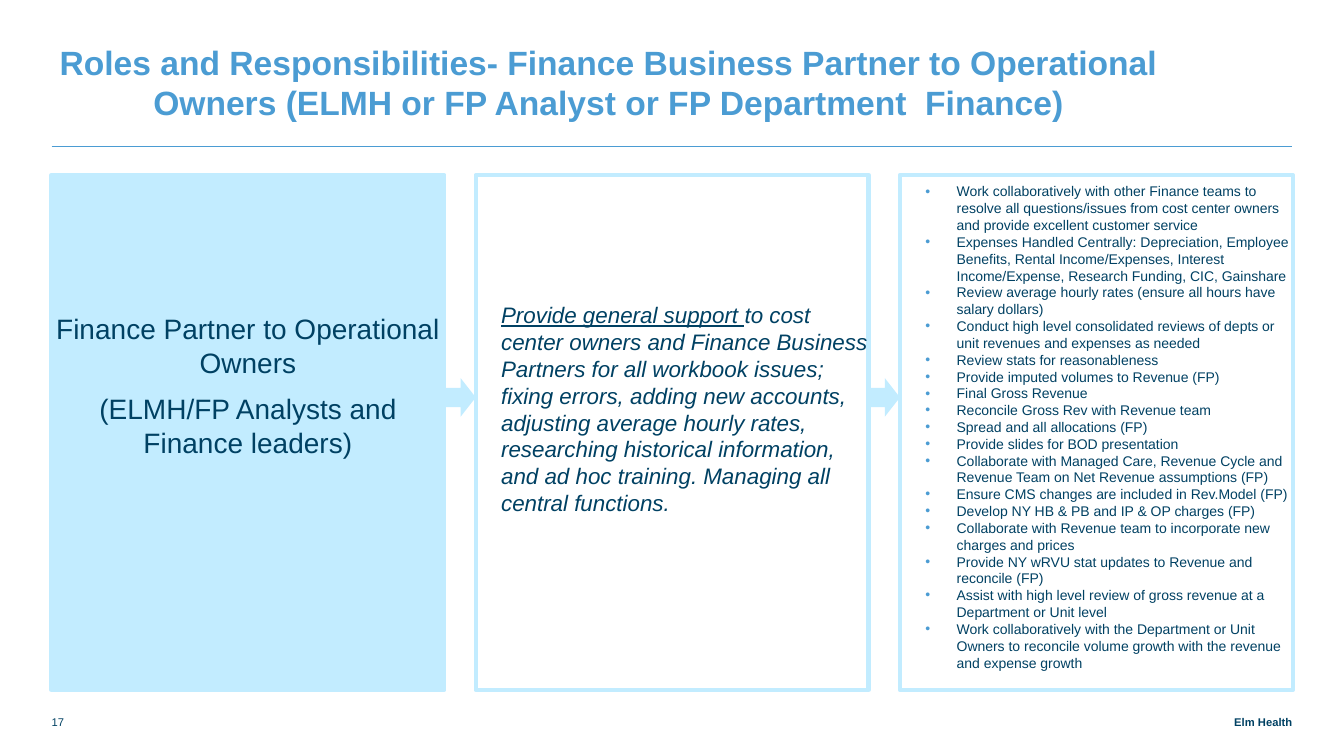
from lxml import etree
from pptx import Presentation
from pptx.dml.color import RGBColor
from pptx.enum.shapes import MSO_CONNECTOR, MSO_SHAPE
from pptx.enum.text import MSO_ANCHOR, PP_ALIGN
from pptx.oxml.ns import qn
from pptx.util import Cm, Pt

RECTANGLE, ARROW = MSO_SHAPE.RECTANGLE, MSO_SHAPE.RIGHT_ARROW
STRAIGHT = MSO_CONNECTOR.STRAIGHT
TOP, BOTTOM = MSO_ANCHOR.TOP, MSO_ANCHOR.BOTTOM
LEFT, CENTER, RIGHT = PP_ALIGN.LEFT, PP_ALIGN.CENTER, PP_ALIGN.RIGHT

NAVY, BLUE, PALE = "004163", "4B9CD3", "C2ECFF"
MARGIN, RIGHT_EDGE = 1.3, 32.57
PANEL_TOP, PANEL_WIDTH, PANEL_HEIGHT = 4.41, 9.9, 12.98
PANEL_STEP = 10.69
ARROW_WIDTH, ARROW_HEIGHT = 0.76, 0.97

TITLE = ("Roles and Responsibilities- Finance Business Partner to Operational "
         "Owners (ELMH or FP Analyst or FP Department  Finance)")
PARTNERS = ["Finance Partner to Operational Owners",
            "(ELMH/FP Analysts and Finance leaders)"]
SUPPORT_LEAD = "Provide general support "
SUPPORT = ("to cost center owners and Finance Business Partners for all workbook "
           "issues; fixing errors, adding new accounts, adjusting average hourly "
           "rates, researching historical information, and ad hoc training. "
           "Managing all central functions.")
DUTIES = [
    "Work collaboratively with other Finance teams to resolve all questions/issues "
    "from cost center owners and provide excellent customer service",
    "Expenses Handled Centrally: Depreciation, Employee Benefits, Rental "
    "Income/Expenses, Interest Income/Expense, Research Funding, CIC, Gainshare",
    "Review average hourly rates (ensure all hours have salary dollars)",
    "Conduct high level consolidated reviews of depts or unit revenues and "
    "expenses as needed",
    "Review stats for reasonableness",
    "Provide imputed volumes to Revenue (FP)",
    "Final Gross Revenue",
    "Reconcile Gross Rev with Revenue team",
    "Spread and all allocations (FP)",
    "Provide slides for BOD presentation",
    "Collaborate with Managed Care, Revenue Cycle and Revenue Team on Net Revenue "
    "assumptions (FP)",
    "Ensure CMS changes are included in Rev.Model (FP)",
    "Develop NY HB & PB and IP & OP charges (FP)",
    "Collaborate with Revenue team to incorporate new charges and prices",
    "Provide NY wRVU stat updates to Revenue and reconcile (FP)",
    "Assist with high level review of gross revenue at a Department or Unit level",
    "Work collaboratively with the Department or Unit Owners to reconcile volume "
    "growth with the revenue and expense growth",
]


def color(value):
    """Turn a hex string into a colour."""
    return RGBColor.from_string(value)


def set_frame(box, anchor, top_inset=0):
    """Set wrapping, anchor and insets of a box and return its text frame."""
    frame = box.text_frame
    frame.word_wrap = True
    frame.vertical_anchor = anchor
    frame.margin_left = frame.margin_right = frame.margin_bottom = 0
    frame.margin_top = Cm(top_inset)
    return frame


def style_span(span, size, hue=NAVY, bold=False, italic=False, underline=False):
    """Format one run of text."""
    font = span.font
    font.name, font.size = "Arial", Pt(size)
    font.bold, font.italic, font.underline = bold, italic, underline
    font.color.rgb = color(hue)


def fill_paragraphs(frame, texts, size, align=LEFT, spacing=None, after=0):
    """Write one formatted paragraph for each text."""
    for index, text in enumerate(texts):
        para = frame.add_paragraph() if index else frame.paragraphs[0]
        para.text = text
        para.alignment = align
        para.line_spacing = spacing
        para.space_after = Pt(after)
        for span in para.runs:
            style_span(span, size)


def add_bullet(para):
    """Give a paragraph a coloured bullet with a hanging indent."""
    properties = para._p.get_or_add_pPr()
    properties.set("marL", str(Cm(1.43)))
    properties.set("indent", str(-Cm(0.79)))
    bullet_color = etree.SubElement(properties, qn("a:buClr"))
    etree.SubElement(bullet_color, qn("a:srgbClr"), val=BLUE)
    etree.SubElement(properties, qn("a:buFont"), typeface="Arial")
    etree.SubElement(properties, qn("a:buChar"), char="•")


def add_label(page, text, left, top, width, height, size, hue=NAVY,
              bold=False, align=LEFT, spacing=None):
    """Add a bottom-anchored line of text."""
    box = page.shapes.add_textbox(Cm(left), Cm(top), Cm(width), Cm(height))
    frame = set_frame(box, BOTTOM)
    fill_paragraphs(frame, [text], size, align, spacing)
    style_span(frame.paragraphs[0].runs[0], size, hue, bold)


def add_rule(page):
    """Draw the thin line under the title."""
    rule = page.shapes.add_connector(
        STRAIGHT, Cm(MARGIN), Cm(3.69), Cm(RIGHT_EDGE), Cm(3.69))
    rule.line.color.rgb = color(BLUE)
    rule.line.width = Pt(0.5)
    etree.SubElement(rule._element.spPr, qn("a:effectLst"))


def add_panel(page, column, top_inset, filled=False):
    """Add one bordered panel and return its text frame."""
    panel = page.shapes.add_shape(
        RECTANGLE, Cm(MARGIN + column * PANEL_STEP), Cm(PANEL_TOP),
        Cm(PANEL_WIDTH), Cm(PANEL_HEIGHT))
    panel.shadow.inherit = False
    if filled:
        panel.fill.solid()
        panel.fill.fore_color.rgb = color(PALE)
    else:
        panel.fill.background()
    panel.line.color.rgb = color(PALE)
    panel.line.width = Pt(3)
    return set_frame(panel, TOP, top_inset)


def add_arrow(page, column):
    """Add the arrow that leads from a panel to the next one."""
    left = MARGIN + (column + 1) * PANEL_STEP - ARROW_WIDTH
    arrow = page.shapes.add_shape(
        ARROW, Cm(left), Cm(9.53), Cm(ARROW_WIDTH), Cm(ARROW_HEIGHT))
    arrow.shadow.inherit = False
    arrow.fill.solid()
    arrow.fill.fore_color.rgb = color(PALE)
    arrow.line.fill.background()


def main():
    """Build the slide and save it."""
    deck = Presentation()
    deck.slide_width, deck.slide_height = Cm(33.87), Cm(19.05)
    page = deck.slides.add_slide(deck.slide_layouts[6])

    add_label(page, TITLE, MARGIN, 1.07, 28.07, 2, 24, BLUE, True, CENTER, Pt(28))
    add_rule(page)

    partners = add_panel(page, 0, 3.45, filled=True)
    fill_paragraphs(partners, PARTNERS, 20, CENTER, after=9)

    support = add_panel(page, 1, 3.18)
    fill_paragraphs(support, [SUPPORT_LEAD], 16)
    para = support.paragraphs[0]
    para._p.get_or_add_pPr().set("marL", str(Cm(0.64)))
    style_span(para.runs[0], 16, italic=True, underline=True)
    span = para.add_run()
    span.text = SUPPORT
    style_span(span, 16, italic=True)

    duties = add_panel(page, 2, 0.2)
    fill_paragraphs(duties, DUTIES, 10)
    for para in duties.paragraphs:
        add_bullet(para)

    for column in range(2):
        add_arrow(page, column)

    add_label(page, "17", MARGIN, 17.78, 1.17, 0.58, 8)
    add_label(page, "Elm Health", 28.42, 17.78, 4.15, 0.58, 8, bold=True, align=RIGHT)
    deck.save("out.pptx")


if __name__ == "__main__":
    main()
